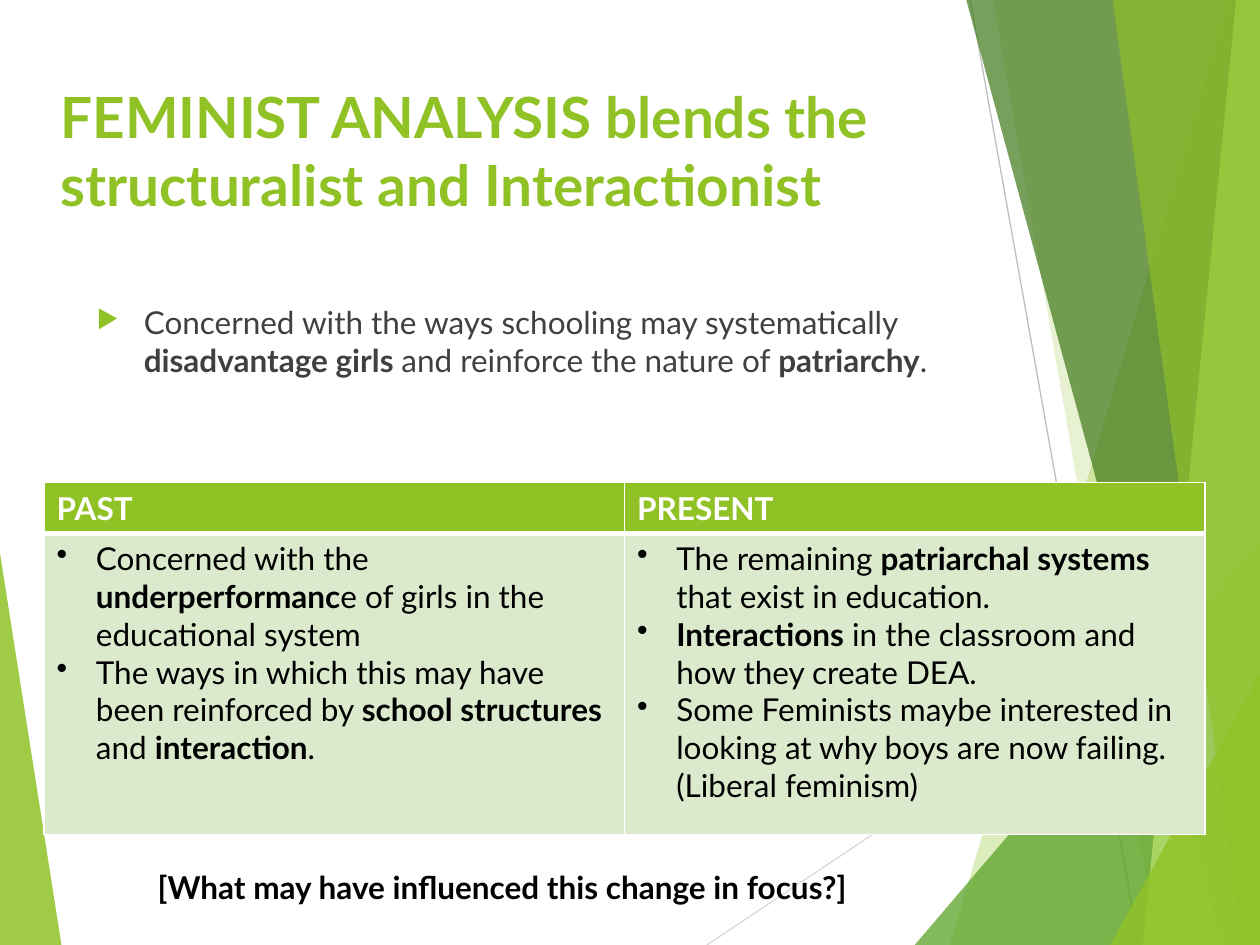
import dataclasses

import lxml.etree
import pptx
import pptx.dml.color
import pptx.enum.shapes
import pptx.enum.text
import pptx.oxml.ns
import pptx.util

Cm = pptx.util.Cm
Pt = pptx.util.Pt
qn = pptx.oxml.ns.qn

COLOURS = {
    "lime": "90C226",
    "leaf": "54A021",
    "forest": "3F7819",
    "pale": "C0E474",
    "mint": "DBE9CD",
    "silver": "D9D9D9",
    "grey": "BFBFBF",
    "charcoal": "404040",
    "black": "000000",
    "white": "FFFFFF",
}
FONT = "Lato"
WIDTH, HEIGHT = 25.4, 19.05


@dataclasses.dataclass
class Facet:
    points: list[tuple[float, float]]
    colour: str
    opacity: int


@dataclasses.dataclass
class Ray:
    start: tuple[float, float]
    end: tuple[float, float]
    colour: str


@dataclasses.dataclass
class Column:
    heading: str
    points: list[str]


def band(top: float, bottom: float, colour: str, opacity: int) -> Facet:
    corners = [(top, 0), (bottom, HEIGHT), (WIDTH, HEIGHT), (WIDTH, 0)]
    return Facet(corners, colour, opacity)


def corner(left: float, top: float, colour: str, opacity: int) -> Facet:
    return Facet([(left, HEIGHT), (WIDTH, top), (WIDTH, HEIGHT)], colour, opacity)


RAYS = [
    Ray((14.25, HEIGHT), (WIDTH, 11.61), "silver"),
    Ray((19.56, 0), (22.96, HEIGHT), "grey"),
]
LEFT_FACET = Facet([(0, 11.15), (1.24, HEIGHT), (0, HEIGHT)], "lime", 85)
RIGHT_FACETS = [
    band(24.77, 19.15, "lime", 30),
    band(20.02, 23.34, "lime", 20),
    corner(18.44, 10.9, "leaf", 72),
    band(19.48, 24.64, "forest", 70),
    band(24.92, 23.04, "pale", 70),
    band(22.43, 25.04, "lime", 65),
    corner(22.38, 13.59, "lime", 80),
]
COLUMNS = [
    Column("PAST", [
        "Concerned with the **underperformanc**e of girls in the educational system",
        "The ways in which this may have been reinforced by "
        "**school structures **and **interaction**.",
    ]),
    Column("PRESENT", [
        "The remaining **patriarchal systems **that exist in education.",
        "**Interactions** in the classroom and how they create DEA.",
        "Some Feminists maybe interested in looking at why boys are now failing. "
        "(Liberal feminism)",
    ]),
]


def rgb(name: str) -> pptx.dml.color.RGBColor:
    return pptx.dml.color.RGBColor.from_string(COLOURS[name])


def draw_facet(page, facet: Facet) -> None:
    (left, top), *others = facet.points
    builder = page.shapes.build_freeform(Cm(left), Cm(top))
    builder.add_line_segments([(Cm(x), Cm(y)) for x, y in others])
    shape = builder.convert_to_shape()
    shape.shadow.inherit = False
    shape.line.fill.background()
    shape.fill.solid()
    shape.fill.fore_color.rgb = rgb(facet.colour)
    tint = shape._element.spPr.find(qn("a:solidFill"))[0]
    lxml.etree.SubElement(tint, qn("a:alpha"), val=str(facet.opacity * 1000))


def draw_ray(page, ray: Ray) -> None:
    line = page.shapes.add_connector(
        pptx.enum.shapes.MSO_CONNECTOR.STRAIGHT,
        *(Cm(length) for length in ray.start + ray.end))
    line.line.color.rgb = rgb(ray.colour)
    line.line.width = Pt(0.75)
    lxml.etree.SubElement(line._element.spPr, qn("a:effectLst"))


def write(para, text: str, *, size: float = 18, colour: str = "black",
          bold: bool = False, bullet: str = "", indent: float = 0.79,
          bullet_colour: str = "black", bullet_size: int = 100) -> None:
    for index, piece in enumerate(text.split("**")):
        if piece:
            span = para.add_run()
            span.text = piece
            span.font.name = FONT
            span.font.size = Pt(size)
            span.font.bold = bold or index % 2 == 1
            span.font.color.rgb = rgb(colour)
    if bullet:
        props = para._p.get_or_add_pPr()
        props.set("marL", str(Cm(indent)))
        props.set("indent", str(-Cm(indent)))
        tint = lxml.etree.SubElement(props, qn("a:buClr"))
        lxml.etree.SubElement(tint, qn("a:srgbClr"), val=COLOURS[bullet_colour])
        lxml.etree.SubElement(props, qn("a:buSzPct"), val=str(bullet_size * 1000))
        lxml.etree.SubElement(props, qn("a:buChar"), char=bullet)


def add_text(page, left: float, top: float, width: float, height: float, text: str,
             *, align=pptx.enum.text.PP_ALIGN.LEFT, **style) -> None:
    box = page.shapes.add_textbox(Cm(left), Cm(top), Cm(width), Cm(height))
    box.text_frame.word_wrap = True
    para = box.text_frame.paragraphs[0]
    para.alignment = align
    write(para, text, **style)


def paint_cell(cell, fill: str, bottom: float) -> None:
    cell.fill.solid()
    cell.fill.fore_color.rgb = rgb(fill)
    props = cell._tc.get_or_add_tcPr()
    edges = {"a:lnL": 1, "a:lnR": 1, "a:lnT": 1, "a:lnB": bottom}
    for index, (tag, width) in enumerate(edges.items()):
        edge = lxml.etree.Element(qn(tag), w=str(Pt(width)))
        paint = lxml.etree.SubElement(edge, qn("a:solidFill"))
        lxml.etree.SubElement(paint, qn("a:srgbClr"), val=COLOURS["white"])
        props.insert(index, edge)


def draw_comparison(page, columns: list[Column]) -> None:
    table = page.shapes.add_table(
        2, len(columns), Cm(0.89), Cm(9.73), Cm(23.4), Cm(7.09)).table
    table.rows[0].height = Cm(1.02)
    table.rows[1].height = Cm(6.07)
    for index, column in enumerate(columns):
        heading, body = table.cell(0, index), table.cell(1, index)
        paint_cell(heading, "lime", 3)
        paint_cell(body, "mint", 1)
        write(heading.text_frame.paragraphs[0], column.heading, colour="white", bold=True)
        for number, point in enumerate(column.points):
            frame = body.text_frame
            para = frame.add_paragraph() if number else frame.paragraphs[0]
            write(para, point, bullet="•")


def main() -> None:
    deck = pptx.Presentation()
    deck.slide_width, deck.slide_height = Cm(WIDTH), Cm(HEIGHT)
    page = deck.slides.add_slide(deck.slide_layouts[6])
    draw_facet(page, LEFT_FACET)
    for ray in RAYS:
        draw_ray(page, ray)
    for facet in RIGHT_FACETS:
        draw_facet(page, facet)
    add_text(page, 0.97, 1.52, 19.13, 4.47,
             "FEMINIST ANALYSIS blends the structuralist and Interactionist",
             size=32.4, colour="lime", bold=True)
    add_text(page, 1.7, 5.99, 17.63, 10.77,
             "Concerned with the ways schooling may systematically "
             "**disadvantage girls **and reinforce the nature of **patriarchy**.",
             colour="charcoal", bullet="▶", indent=0.95,
             bullet_colour="lime", bullet_size=80)
    draw_comparison(page, COLUMNS)
    add_text(page, -0.3, 17.37, 21, 1.02,
             "[What may have influenced this change in focus?] ",
             bold=True, align=pptx.enum.text.PP_ALIGN.CENTER)
    deck.save("out.pptx")


if __name__ == "__main__":
    main()
